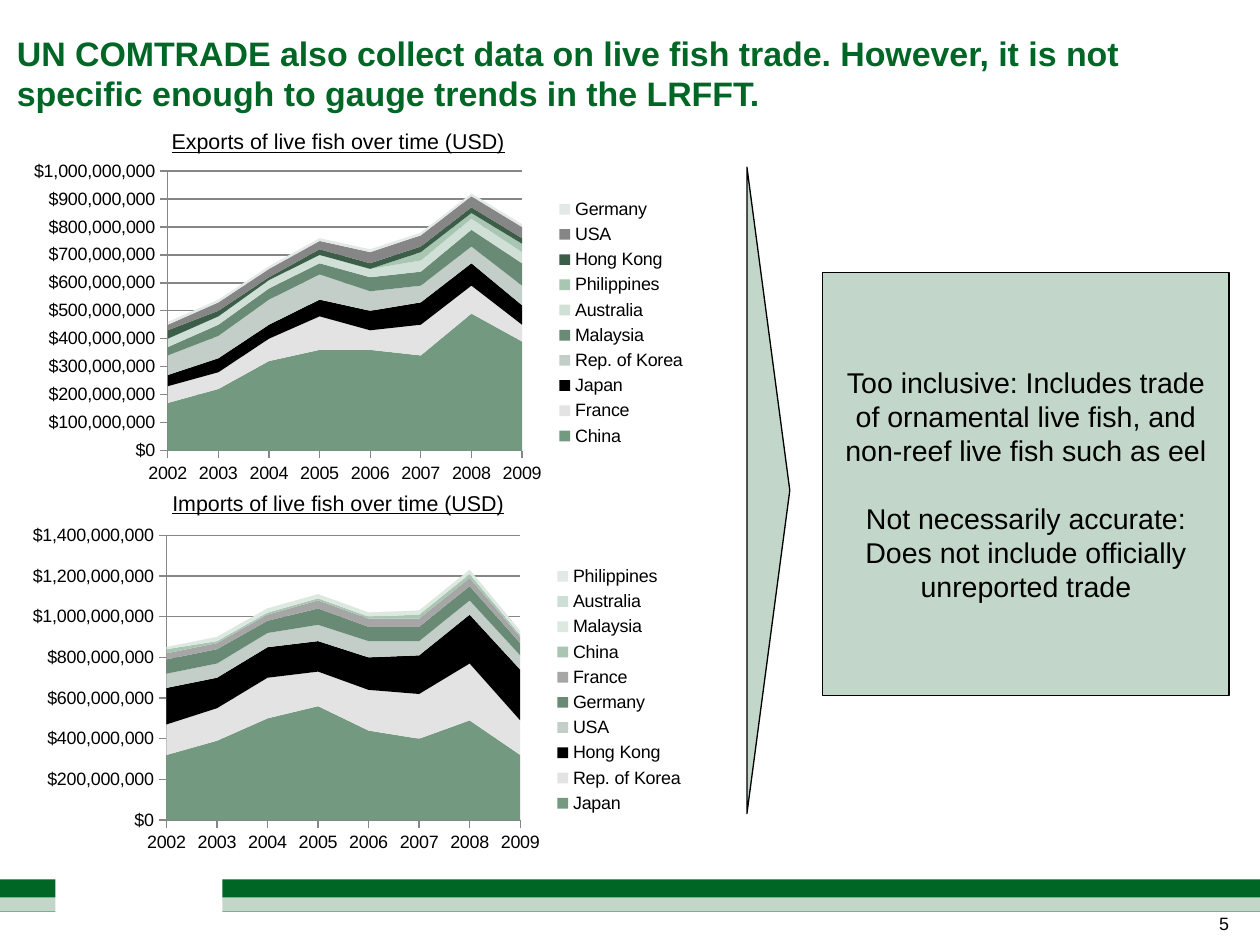
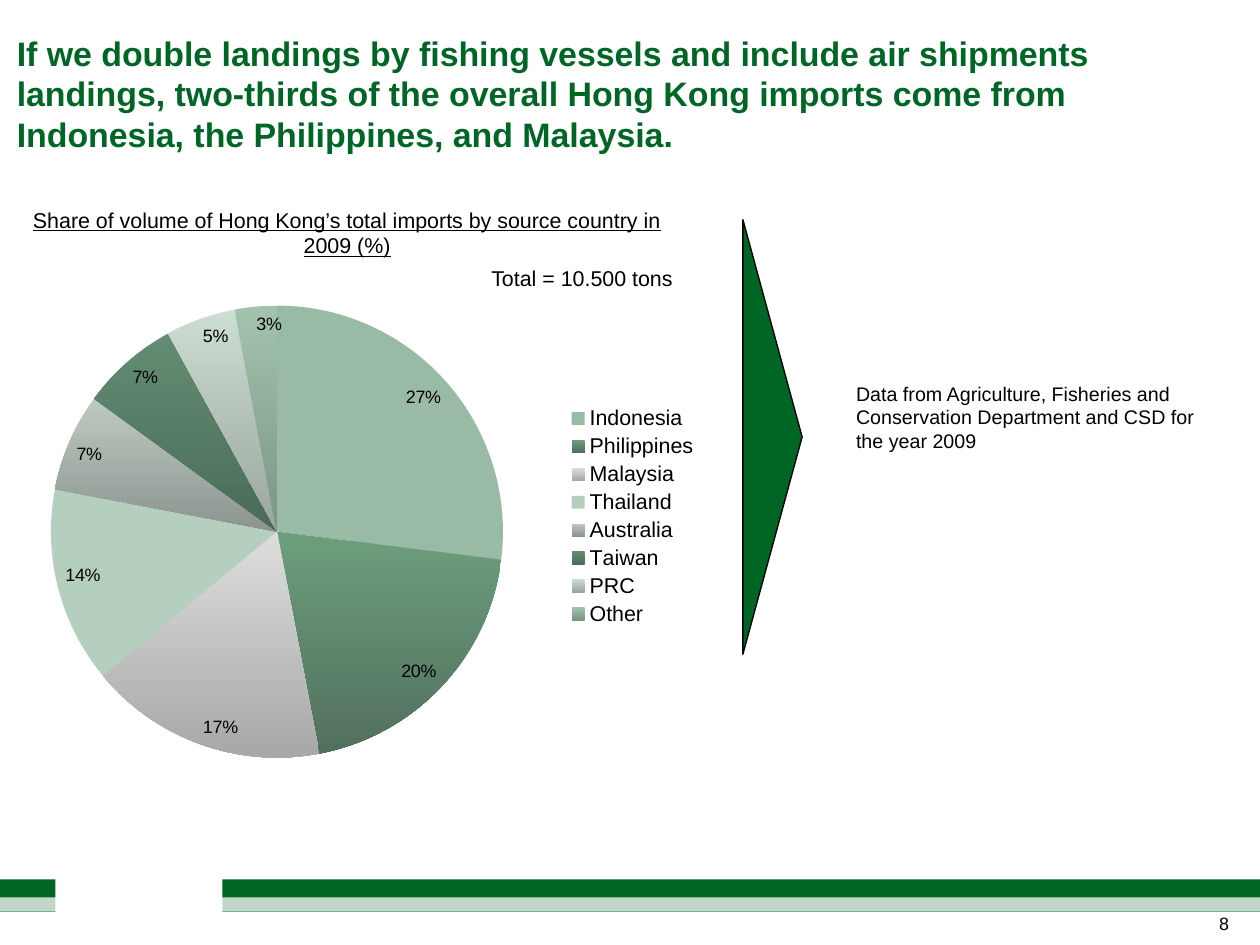
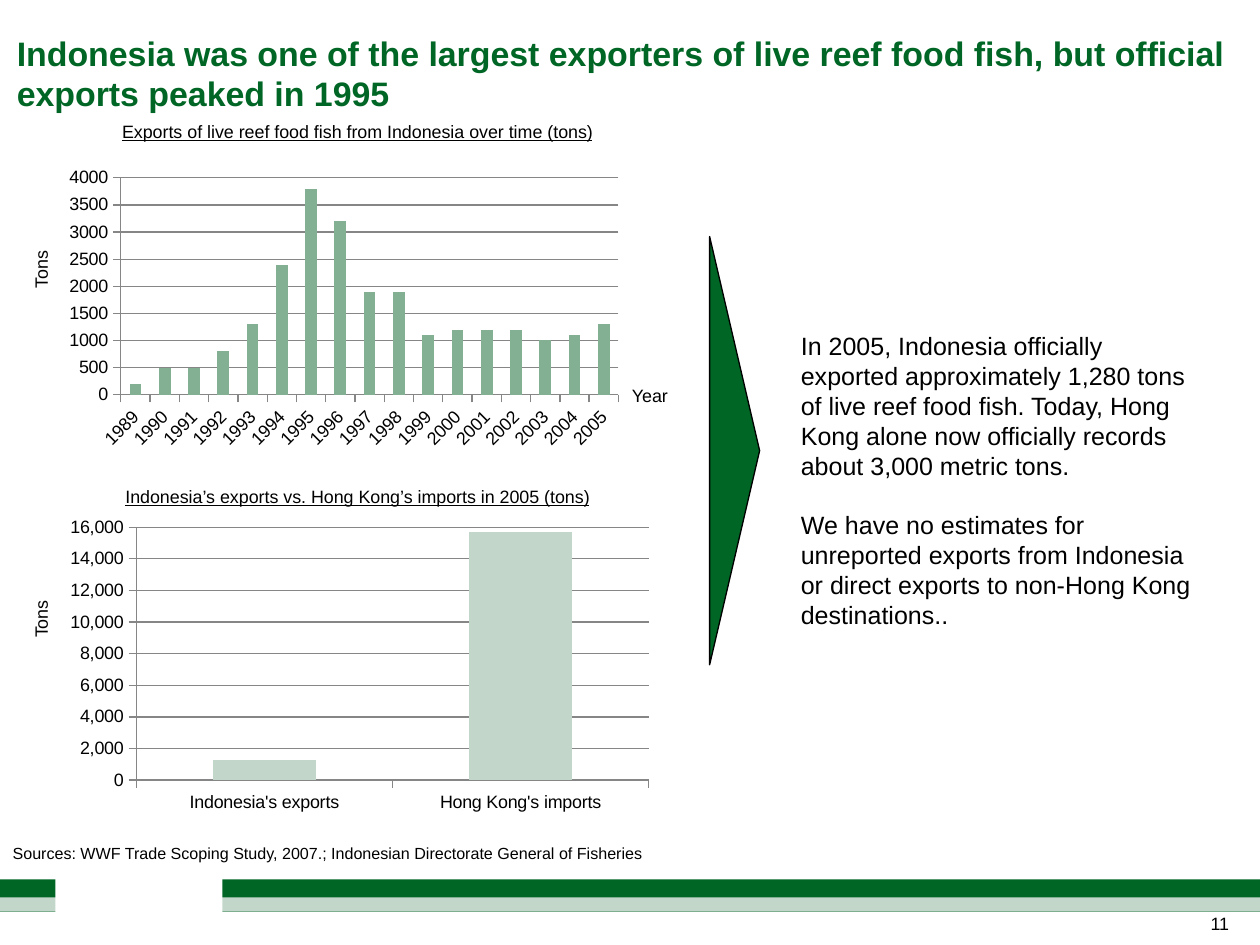
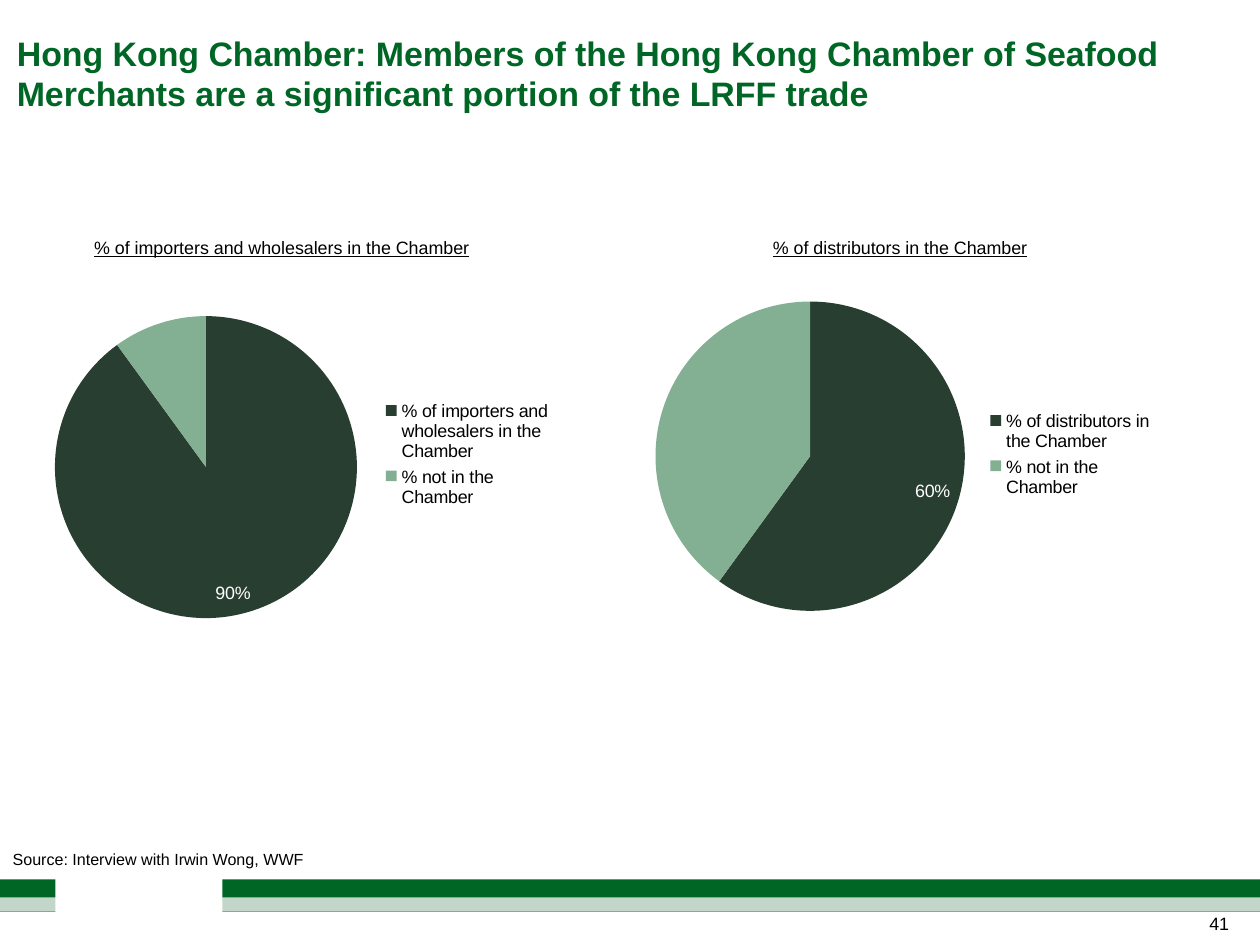
from pptx import Presentation
from pptx.chart.data import CategoryChartData
from pptx.dml.color import RGBColor
from pptx.enum.chart import XL_CHART_TYPE, XL_LABEL_POSITION, XL_LEGEND_POSITION, XL_TICK_MARK
from pptx.enum.shapes import MSO_SHAPE
from pptx.enum.text import MSO_ANCHOR, MSO_AUTO_SIZE, PP_ALIGN
from pptx.oxml import parse_xml
from pptx.oxml.ns import nsdecls, qn
from pptx.util import Pt

AREA = XL_CHART_TYPE.AREA_STACKED
COLUMN = XL_CHART_TYPE.COLUMN_CLUSTERED
PIE = XL_CHART_TYPE.PIE
INSIDE_END = XL_LABEL_POSITION.INSIDE_END
LEGEND_RIGHT = XL_LEGEND_POSITION.RIGHT
TICK_OUTSIDE = XL_TICK_MARK.OUTSIDE
RECTANGLE = MSO_SHAPE.RECTANGLE
TRIANGLE = MSO_SHAPE.ISOSCELES_TRIANGLE
LEFT, CENTER, RIGHT = PP_ALIGN.LEFT, PP_ALIGN.CENTER, PP_ALIGN.RIGHT
TOP, MIDDLE = MSO_ANCHOR.TOP, MSO_ANCHOR.MIDDLE

FONT = "Arial"
BLACK, WHITE, GRAY = "000000", "FFFFFF", "868686"
GREEN, PALE_GREEN, DARK_GREEN, SAGE = "006625", "C2D7CA", "283E31", "83AF93"
SLIDE_WIDTH, SLIDE_HEIGHT = 705.6, 529.2
TITLE_ONLY = 5

YEARS = [str(year) for year in range(2002, 2010)]
MILLION = 1_000_000
# Series: name, colour, values in millions of dollars
EXPORTS = [
    ("China", "739A81", [170, 220, 320, 360, 360, 340, 490, 390]),
    ("France", "E3E3E3", [60, 60, 80, 120, 70, 110, 100, 60]),
    ("Japan", BLACK, [40, 50, 50, 60, 70, 80, 80, 70]),
    ("Rep. of Korea", "C3CEC8", [70, 80, 90, 90, 70, 60, 60, 70]),
    ("Malaysia", "698B76", [30, 40, 40, 40, 50, 50, 60, 80]),
    ("Australia", "D0E0D6", [30, 30, 30, 30, 30, 40, 40, 40]),
    ("Philippines", "A9C6B3", [None] * 5 + [30, 20, 30]),
    ("Hong Kong", "3C5D48", [30, 20, 10, 20, 20, 20, 20, 20]),
    ("USA", GRAY, [20, 30, 30, 30, 40, 40, 40, 40]),
    ("Germany", "E3EAE6", [10] * 8),
]
IMPORTS = [
    ("Japan", "739A81", [320, 390, 500, 560, 440, 400, 490, 320]),
    ("Rep. of Korea", "E3E3E3", [150, 160, 200, 170, 200, 220, 280, 170]),
    ("Hong Kong", BLACK, [180, 150, 150, 150, 160, 190, 240, 250]),
    ("USA", "C3CEC8", [70, 70, 70, 80, 80, 70, 70, 70]),
    ("Germany", "698B76", [70, 70, 60, 80, 70, 70, 70, 60]),
    ("France", "A6A6A6", [30, 30, 30, 40, 40, 40, 40, 30]),
    ("China", "A9C6B3", [20, 10, 10, 10, 10, 20, 20, 10]),
    ("Malaysia", "DDE8E1", [10] + [20] * 7),
    ("Australia", "CDDFD4", [0] * 8),
    ("Philippines", "E3EAE6", [None] * 5 + [0] * 3),
]
# Slice: name, share, one colour or the top and bottom of a gradient
SOURCE_COUNTRIES = [
    ("Indonesia", 27, ["99BAA5"]),
    ("Philippines", 20, ["6C9E7D", "52705E"]),
    ("Malaysia", 17, ["DDDDDD", "A8A8A8"]),
    ("Thailand", 14, ["B5CFBE"]),
    ("Australia", 7, ["BDCAC2", "8C948F"]),
    ("Taiwan", 7, ["628D72", "4B6B57"]),
    ("PRC", 5, ["CCDDD2", "9AA59E"]),
    ("Other", 3, ["A3C3AE", "7A9583"]),
]
INDONESIA_EXPORTS = [200, 500, 500, 800, 1300, 2400, 3800, 3200, 1900, 1900,
                     1100, 1200, 1200, 1200, 1000, 1100, 1300]


def color(value):
    return RGBColor.from_string(value)


def points(box):
    return [Pt(length) for length in box]


def set_font(font, size, font_color=BLACK, bold=False, underline=False):
    font.name = FONT
    font.size = Pt(size)
    font.color.rgb = color(font_color)
    font.bold = bold
    font.underline = underline


def write(frame, paragraphs, size, align=LEFT, anchor=TOP, inset=None, gap=0, **style):
    """Fill a text frame; gap is the space between paragraphs."""
    frame.word_wrap = True
    frame.auto_size = MSO_AUTO_SIZE.NONE
    frame.vertical_anchor = anchor
    if inset is not None:
        frame.margin_left = frame.margin_right = Pt(inset)
        frame.margin_top = frame.margin_bottom = Pt(inset)
    for index, text in enumerate(paragraphs):
        paragraph = frame.add_paragraph() if index else frame.paragraphs[0]
        paragraph.text = text
        paragraph.alignment = align
        if index:
            paragraph.space_before = Pt(gap)
        set_font(paragraph.font, size, **style)


def add_text(slide, box, paragraphs, size, rotation=0, **style):
    text_box = slide.shapes.add_textbox(*points(box))
    text_box.rotation = rotation
    write(text_box.text_frame, paragraphs, size, **style)


def add_heading(slide, box, text, size):
    add_text(slide, box, [text], size, align=CENTER, underline=True)


def add_shape(slide, kind, box, fill, outlined=False):
    shape = slide.shapes.add_shape(kind, *points(box))
    shape.shadow.inherit = False
    shape.fill.solid()
    shape.fill.fore_color.rgb = color(fill)
    if outlined:
        shape.line.color.rgb = color(BLACK)
        shape.line.width = Pt(0.75)
    else:
        shape.line.fill.background()
    return shape


def add_pointer(slide, box, fill):
    """Triangle pointing right that fills the given box once turned."""
    left, top, width, height = box
    shift = (height - width) / 2
    triangle = add_shape(slide, TRIANGLE, (left - shift, top + shift, height, width), fill, True)
    triangle.rotation = 90


def add_titled_slide(presentation, title, number):
    """Slide with the shared title, footer bands and page number."""
    slide = presentation.slides.add_slide(presentation.slide_layouts[TITLE_ONLY])
    for box, fill in [((0, 492.5, SLIDE_WIDTH, 18), GREEN),
                      ((0, 502.5, SLIDE_WIDTH, 8), PALE_GREEN),
                      ((31, 486.7, 93.6, 41), WHITE)]:
        add_shape(slide, RECTANGLE, box, fill)
    placeholder = slide.shapes.title
    placeholder.left, placeholder.top, placeholder.width, placeholder.height = points(
        (9.4, 18, 679, 69))
    write(placeholder.text_frame, [title], 19, inset=0, font_color=GREEN, bold=True)
    add_text(slide, (640, 511.2, 48.3, 12.2), [str(number)], 10, align=RIGHT, inset=0)
    return slide


def add_source(slide, top, text):
    add_text(slide, (0, top, SLIDE_WIDTH, 18), [text], 9)


def place_plot(chart, plot_box):
    """Fix the inner plot area, given as fractions of the chart."""
    plot_area = chart._chartSpace.chart.plotArea
    for layout in plot_area.findall(qn("c:layout")):
        plot_area.remove(layout)
    sides = "".join(f'<c:{name} val="{value}"/>' for name, value in zip("xywh", plot_box))
    plot_area.insert(0, parse_xml(
        f'<c:layout {nsdecls("c")}><c:manualLayout><c:layoutTarget val="inner"/>'
        f'<c:xMode val="edge"/><c:yMode val="edge"/>{sides}</c:manualLayout></c:layout>'))


def add_chart(slide, kind, box, plot_box, categories, series, number_format="General",
              legend_size=None):
    data = CategoryChartData(number_format=number_format)
    data.categories = categories
    for name, values in series:
        data.add_series(name, values)
    chart = slide.shapes.add_chart(kind, *points(box), data).chart
    chart.has_title = False
    set_font(chart.font, 10)
    place_plot(chart, plot_box)
    chart.has_legend = legend_size is not None
    if chart.has_legend:
        chart.legend.position = LEGEND_RIGHT
        chart.legend.include_in_layout = False
        set_font(chart.legend.font, legend_size)
    return chart


def format_axes(chart, maximum, step, number_format):
    chart.plots[0].vary_by_categories = False
    value_axis = chart.value_axis
    value_axis.minimum_scale = 0
    value_axis.maximum_scale = maximum
    value_axis.major_unit = step
    value_axis.has_major_gridlines = True
    value_axis.tick_labels.number_format = number_format
    value_axis.tick_labels.number_format_is_linked = False
    for axis in (value_axis, chart.category_axis):
        axis.major_tick_mark = TICK_OUTSIDE
        axis.format.line.color.rgb = color(GRAY)
        axis.format.line.width = Pt(0.75)
        set_font(axis.tick_labels.font, 10)
    gridline = value_axis.major_gridlines.format.line
    gridline.color.rgb = color(GRAY)
    gridline.width = Pt(0.75)


def paint(element, fill):
    element.format.fill.solid()
    element.format.fill.fore_color.rgb = color(fill)


def add_area_chart(slide, box, series, maximum, step):
    scaled = [(name, [None if value is None else value * MILLION for value in values])
              for name, _, values in series]
    chart = add_chart(slide, AREA, box, (0.22, 0.05, 0.52, 0.83), YEARS, scaled,
                      legend_size=10)
    format_axes(chart, maximum * MILLION, step * MILLION, '"$"#,##0')
    for area, (_, fill, _) in zip(chart.plots[0].series, series):
        paint(area, fill)


def add_column_chart(slide, box, plot_box, categories, values, fill, maximum, step,
                     number_format):
    chart = add_chart(slide, COLUMN, box, plot_box, categories, [("Series 1", values)])
    format_axes(chart, maximum, step, number_format)
    chart.plots[0].gap_width = 150
    paint(chart.plots[0].series[0], fill)
    return chart


def add_pie_chart(slide, box, plot_box, slices, number_format, legend_size):
    names, values, fills = zip(*slices)
    chart = add_chart(slide, PIE, box, plot_box, names, [("Series 1", values)],
                      number_format, legend_size)
    plot = chart.plots[0]
    plot.has_data_labels = True
    labels = plot.data_labels
    labels.show_value = False
    labels.show_percentage = True
    labels.number_format = "0%"
    labels.number_format_is_linked = False
    labels.position = INSIDE_END
    set_font(labels.font, 10)
    for index, slice_fill in enumerate(fills):
        point = plot.series[0].points[index]
        if len(slice_fill) == 1:
            paint(point, slice_fill[0])
            continue
        fill = point.format.fill
        fill.gradient()
        fill.gradient_angle = 270
        for stop, stop_color in zip(fill.gradient_stops, slice_fill):
            stop.color.rgb = color(stop_color)
    return chart


def add_chamber_pie(slide, box, plot_box, heading_box, name, share):
    add_heading(slide, heading_box, name, 10)
    slices = [(name, share, [DARK_GREEN]), ("% not in the Chamber", round(1 - share, 1), [SAGE])]
    chart = add_pie_chart(slide, box, plot_box, slices, "0%", 10)
    label = chart.plots[0].series[0].points[0].data_label
    set_font(label.font, 10, WHITE)
    label.position = INSIDE_END


def build_comtrade_slide(presentation):
    slide = add_titled_slide(
        presentation,
        "UN COMTRADE also collect data on live fish trade. However, it is not specific "
        "enough to gauge trends in the LRFFT.", 5)
    add_area_chart(slide, (10, 86.4, 381.6, 188.6), EXPORTS, 1000, 100)
    add_area_chart(slide, (9.4, 290.2, 381, 192.2), IMPORTS, 1400, 200)
    for flow, top in [("Exports", 68.4), ("Imports", 270.7)]:
        add_heading(slide, (26, top, 327, 21.6), f"{flow} of live fish over time (USD)", 12)
    add_pointer(slide, (418.3, 93.6, 24, 362), PALE_GREEN)
    panel = add_shape(slide, RECTANGLE, (460.8, 152.6, 227.5, 236.9), PALE_GREEN, True)
    write(panel.text_frame, [
        "Too inclusive: Includes trade of ornamental live fish, and non-reef live fish "
        "such as eel",
        "Not necessarily accurate: Does not include officially unreported trade",
    ], 16, align=CENTER, anchor=MIDDLE, inset=5.8, gap=18.5)


def build_source_country_slide(presentation):
    slide = add_titled_slide(
        presentation,
        "If we double landings by fishing vessels and include air shipments landings, "
        "two-thirds of the overall Hong Kong imports come from Indonesia, the "
        "Philippines, and Malaysia.", 8)
    add_heading(slide, (9.4, 112.3, 370, 36),
                "Share of volume of Hong Kong’s total imports by source country in 2009 (%)", 12)
    add_text(slide, (254, 144.7, 144, 21.6), ["Total = 10.500 tons"], 12, align=CENTER)
    add_pointer(slide, (416, 123, 33.2, 243.4), GREEN)
    add_text(slide, (472.3, 210.2, 216, 60.5), [
        "Data from Agriculture, Fisheries and Conservation Department and CSD for the "
        "year 2009"], 11)
    add_pie_chart(slide, (-3.6, 144.7, 401.8, 288.7), (0.08, 0.09, 0.63, 0.88),
                  SOURCE_COUNTRIES, "General", 12)


def build_indonesia_slide(presentation):
    slide = add_titled_slide(
        presentation,
        "Indonesia was one of the largest exporters of live reef food fish, but official "
        "exports peaked in 1995", 11)
    add_heading(slide, (58.3, 64, 283.7, 18),
                "Exports of live reef food fish from Indonesia over time (tons)", 10)
    yearly = add_column_chart(
        slide, (32.4, 91.4, 320.4, 164.2), (0.11, 0.05, 0.87, 0.74),
        [str(year) for year in range(1989, 2006)], INDONESIA_EXPORTS, SAGE, 4000, 500, "0")
    yearly.category_axis._element.find(qn("c:txPr")).find(qn("a:bodyPr")).set("rot", "-2700000")
    add_text(slide, (341.3, 211.7, 45.4, 18), ["Year"], 10, align=CENTER)
    add_heading(slide, (58.3, 268.6, 283.7, 19.4),
                "Indonesia’s exports vs. Hong Kong’s imports in 2005 (tons)", 10)
    add_column_chart(
        slide, (32.4, 286.6, 337.7, 172.8), (0.13, 0.05, 0.85, 0.82),
        ["Indonesia's exports", "Hong Kong's imports"], [1300, 15700], PALE_GREEN,
        16000, 2000, "#,##0")
    for top in (141.1, 337):
        add_text(slide, (0.7, top, 44.6, 19.4), ["Tons"], 10, rotation=270, align=CENTER)
    add_pointer(slide, (397.4, 132.5, 28, 239.8), GREEN)
    add_text(slide, (441.4, 181.4, 237.6, 177), [
        "In 2005, Indonesia officially exported approximately 1,280 tons of live reef "
        "food fish. Today, Hong Kong alone now officially records about 3,000 metric tons.",
        "We have no estimates for unreported exports from Indonesia or direct exports to "
        "non-Hong Kong destinations..",
    ], 14, gap=16.5)
    add_source(slide, 468.7, "Sources: WWF Trade Scoping Study, 2007.; Indonesian "
                             "Directorate General of Fisheries")


def build_chamber_slide(presentation):
    slide = add_titled_slide(
        presentation,
        "Hong Kong Chamber: Members of the Hong Kong Chamber of Seafood Merchants are a "
        "significant portion of the LRFF trade", 41)
    add_chamber_pie(slide, (20.9, 152.6, 295.2, 203.8), (0.03, 0.12, 0.58, 0.83),
                    (42.5, 128.9, 230.4, 19.4),
                    "% of importers and wholesalers in the Chamber", 0.9)
    add_chamber_pie(slide, (357.8, 152.6, 295.2, 203.8), (0.03, 0.08, 0.59, 0.85),
                    (388.8, 128.9, 230.4, 19.4),
                    "% of distributors in the Chamber", 0.6)
    add_source(slide, 472.3, "Source: Interview with Irwin Wong, WWF")


def main():
    presentation = Presentation()
    presentation.slide_width, presentation.slide_height = points((SLIDE_WIDTH, SLIDE_HEIGHT))
    build_comtrade_slide(presentation)
    build_source_country_slide(presentation)
    build_indonesia_slide(presentation)
    build_chamber_slide(presentation)
    presentation.save("out.pptx")


if __name__ == "__main__":
    main()
